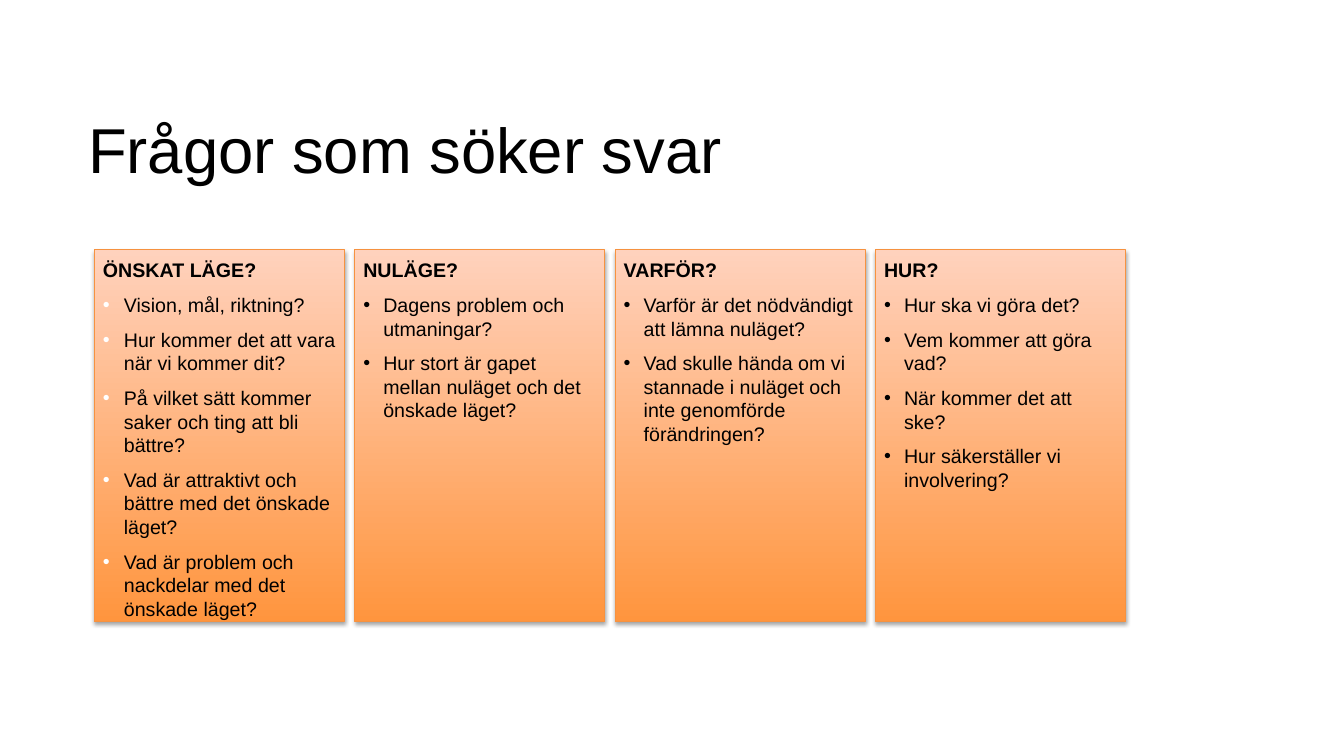
from lxml.etree import SubElement
from pptx import Presentation
from pptx.dml.color import RGBColor
from pptx.enum.shapes import MSO_SHAPE as SHAPE
from pptx.enum.text import MSO_ANCHOR as ANCHOR, PP_ALIGN as ALIGN
from pptx.oxml.ns import qn
from pptx.util import Pt

PX = 9525
FONT = "Arial"
COLORS = {
    "text": "000000",
    "white": "FFFFFF",
    "deep": "FF953E",
    "pale": "FFD2BD",
    "border": "F69240",
}
CARDS = [
    ("ÖNSKAT LÄGE?", "white", 20, [
        "Vision, mål, riktning?",
        "Hur kommer det att vara när vi kommer dit?",
        "På vilket sätt kommer saker och ting att bli bättre?",
        "Vad är attraktivt och bättre med det önskade läget?",
        "Vad är problem och nackdelar med det önskade läget?",
    ]),
    ("NULÄGE?", "text", 19, [
        "Dagens problem och \vutmaningar?",
        "Hur stort är gapet mellan nuläget och det önskade läget?",
    ]),
    ("VARFÖR?", "text", 19, [
        "Varför är det nödvändigt att lämna nuläget?",
        "Vad skulle hända om vi stannade i nuläget och inte genomförde förändringen?",
    ]),
    ("HUR?", "text", 19, [
        "Hur ska vi göra det?",
        "Vem kommer att göra vad?",
        "När kommer det att ske?",
        "Hur säkerställer vi involvering?",
    ]),
]


def rgb(name):
    return RGBColor.from_string(COLORS[name])


def px(*lengths):
    return [n * PX for n in lengths]


def set_frame(tf, left, top, right, bottom):
    """Wrap the text, anchor it at the top and set its insets."""
    tf.word_wrap = True
    tf.vertical_anchor = ANCHOR.TOP
    tf.margin_left, tf.margin_top, tf.margin_right, tf.margin_bottom = px(
        left, top, right, bottom)


def write(p, text, size=14, bold=False, before=0, bullet=None, indent=0):
    """Fill a paragraph; bullet is the colour name of its bullet."""
    p.text = text
    p.alignment = ALIGN.LEFT
    p.space_before = Pt(before)
    if bullet:
        pPr = p._p.get_or_add_pPr()
        pPr.set("marL", str(indent * PX))
        pPr.set("indent", str(-indent * PX))
        clr = SubElement(pPr, qn("a:buClr"))
        SubElement(clr, qn("a:srgbClr"), val=COLORS[bullet])
        SubElement(pPr, qn("a:buFont"), typeface=FONT)
        SubElement(pPr, qn("a:buChar"), char="•")
    for r in p.runs:
        r.font.name = FONT
        r.font.size = Pt(size)
        r.font.bold = bold
        r.font.color.rgb = rgb("text")


def add_shadow(s):
    effects = SubElement(s._element.spPr, qn("a:effectLst"))
    shadow = SubElement(effects, qn("a:outerShdw"), blurRad=str(Pt(3.1)),
                        dist=str(Pt(1.8)), dir="5400000", rotWithShape="0")
    clr = SubElement(shadow, qn("a:srgbClr"), val=COLORS["text"])
    SubElement(clr, qn("a:alpha"), val="35000")


def add_title(slide, x, y, w, h):
    tf = slide.shapes.add_textbox(*px(x, y, w, h)).text_frame
    set_frame(tf, 11, 5, 11, 0)
    write(tf.paragraphs[0], "Frågor som söker svar", size=45.3)


def add_card(slide, x, y, w, h, heading, bullet, indent, questions):
    s = slide.shapes.add_shape(SHAPE.RECTANGLE, *px(x, y, w, h))
    s.fill.gradient()
    s.fill.gradient_angle = 90
    for stop, name, position in zip(s.fill.gradient_stops, ("deep", "pale"), (0, 1)):
        stop.color.rgb = rgb(name)
        stop.position = position
    s.line.color.rgb = rgb("border")
    s.line.width = Pt(0.75)
    add_shadow(s)

    tf = s.text_frame
    set_frame(tf, 8, 8, 8, 8)
    write(tf.paragraphs[0], heading, bold=True)
    for question in questions:
        write(tf.add_paragraph(), question, before=8, bullet=bullet, indent=indent)


def add_cards(slide, x, y, w, h, gap=10):
    """Lay the cards side by side in equal columns."""
    card_w = (w - gap * (len(CARDS) - 1)) // len(CARDS)
    for i, card in enumerate(CARDS):
        add_card(slide, x + i * (card_w + gap), y, card_w, h, *card)


def main():
    prs = Presentation()
    prs.slide_width, prs.slide_height = px(1280, 720)
    slide = prs.slides.add_slide(prs.slide_layouts[6])
    add_title(slide, 73, 100, 903, 64)
    add_cards(slide, 90, 238, 982, 354)
    prs.save("out.pptx")


if __name__ == "__main__":
    main()
